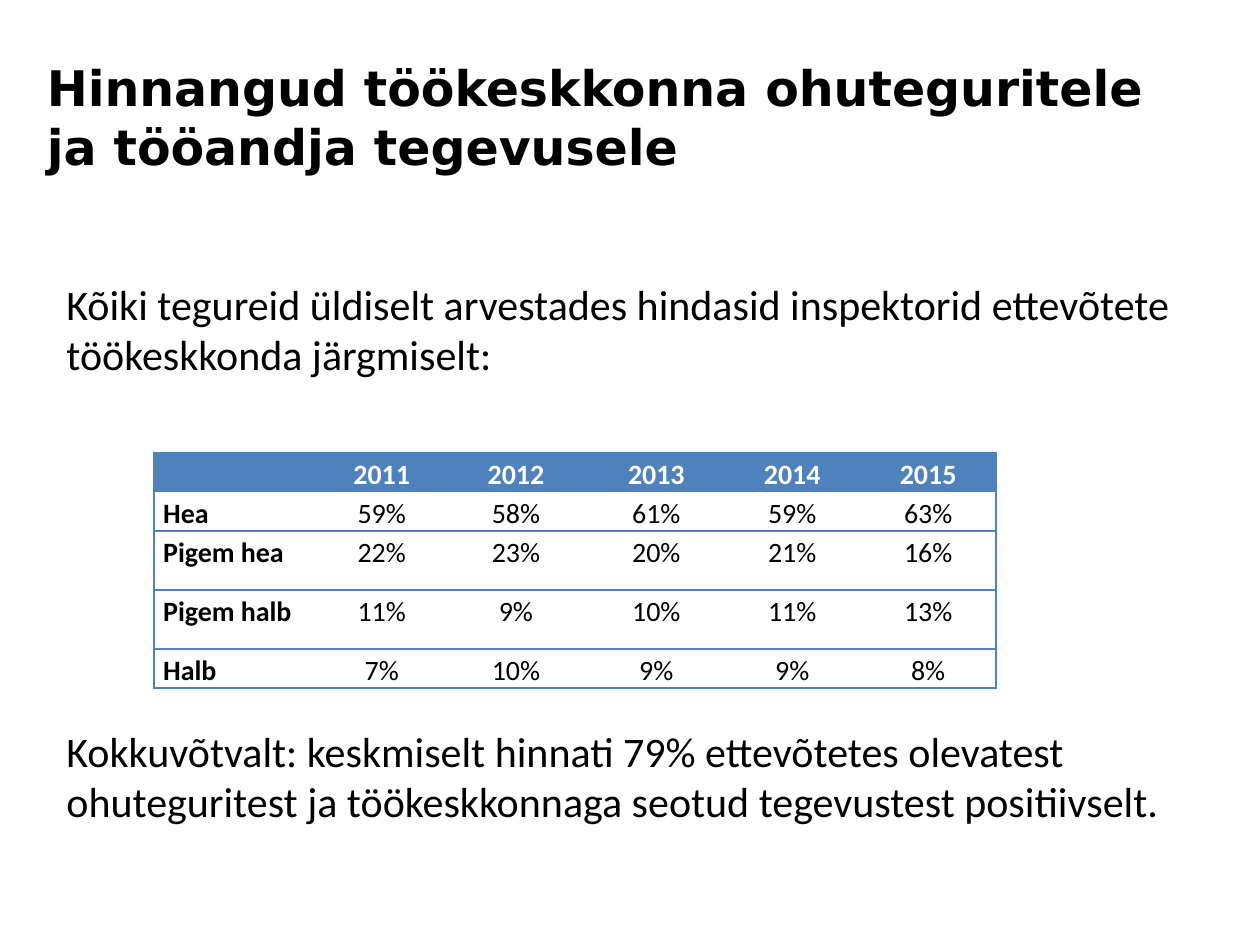
from lxml import etree
from pptx import Presentation
from pptx.dml.color import RGBColor
from pptx.enum.text import MSO_ANCHOR, PP_ALIGN
from pptx.oxml.ns import qn
from pptx.util import Cm, Pt

LEFT, CENTER = PP_ALIGN.LEFT, PP_ALIGN.CENTER
MIDDLE, TOP = MSO_ANCHOR.MIDDLE, MSO_ANCHOR.TOP
BLACK, WHITE, BLUE = "000000", "FFFFFF", "4F81BD"
PLAIN_STYLE = "{2D5ABB26-0587-4C30-8999-92F81FD0307C}"

TITLE = "Hinnangud töökeskkonna ohuteguritele ja tööandja tegevusele"
INTRO = ("Kõiki tegureid üldiselt arvestades hindasid inspektorid ettevõtete "
         "töökeskkonda järgmiselt:")
SUMMARY = ("Kokkuvõtvalt: keskmiselt hinnati 79% ettevõtetes olevatest ohuteguritest "
           "ja töökeskkonnaga seotud tegevustest positiivselt.")
RATINGS = [
    ["", "2011", "2012", "2013", "2014", "2015"],
    ["Hea", "59%", "58%", "61%", "59%", "63%"],
    ["Pigem hea", "22%", "23%", "20%", "21%", "16%"],
    ["Pigem halb", "11%", "9%", "10%", "11%", "13%"],
    ["Halb", "7%", "10%", "9%", "9%", "8%"],
]
COL_WIDTHS = [3.35, 2.49, 2.92, 2.74, 2.74, 2.74]
ROW_HEIGHTS = [0.79, 0.79, 1.19, 1.19, 0.79]


def rgb(color):
    return RGBColor.from_string(color)


def format_font(font, size, color=BLACK, bold=False, name="Calibri"):
    font.size, font.bold, font.name = Pt(size), bold, name
    font.color.rgb = rgb(color)


def place(sp, left, top, width, height):
    sp.left, sp.top, sp.width, sp.height = Cm(left), Cm(top), Cm(width), Cm(height)


def add_title(slide, *box):
    sp = slide.shapes.title
    place(sp, *box)
    tf = sp.text_frame
    tf.text = TITLE
    tf.vertical_anchor = MIDDLE
    p = tf.paragraphs[0]
    p.alignment = LEFT
    format_font(p.runs[0].font, 28, bold=True, name="DejaVu Sans")


def add_body(slide, *box):
    """Introduction and summary, with room for the table between them."""
    tf = slide.shapes.add_textbox(*map(Cm, box)).text_frame
    tf.word_wrap = True
    tf.margin_top = Cm(1.16)
    tf.text = INTRO
    p = tf.add_paragraph()
    p.text = SUMMARY
    p.space_before = Pt(198)
    for p in tf.paragraphs:
        format_font(p.runs[0].font, 24)


def set_borders(cell, sides):
    """Draw blue lines on the given sides, listed in the order L, R, T, B."""
    tcPr = cell._tc.get_or_add_tcPr()
    for i, side in enumerate(sides):
        ln = etree.Element(qn(f"a:ln{side}"), w=str(Pt(1)))
        fill = etree.SubElement(ln, qn("a:solidFill"))
        etree.SubElement(fill, qn("a:srgbClr"), val=BLUE)
        tcPr.insert(i, ln)


def format_cell(cell, text, is_header, is_label):
    cell.margin_left = cell.margin_right = Cm(0.19)
    cell.margin_top = cell.margin_bottom = 0
    cell.vertical_anchor = TOP
    cell.text = text
    p = cell.text_frame.paragraphs[0]
    p.alignment = LEFT if is_label else CENTER
    p.line_spacing = 1.15
    format_font(p.runs[0].font if p.runs else p.font, 16,
                WHITE if is_header else BLACK, is_header or is_label)
    if is_header:
        cell.fill.solid()
        cell.fill.fore_color.rgb = rgb(BLUE)
    else:
        cell.fill.background()


def add_ratings_table(slide, left, top):
    table = slide.shapes.add_table(
        len(RATINGS), len(COL_WIDTHS), Cm(left), Cm(top),
        Cm(sum(COL_WIDTHS)), Cm(sum(ROW_HEIGHTS))).table
    table.horz_banding = False
    table._tbl.tblPr.find(qn("a:tableStyleId")).text = PLAIN_STYLE
    for column, width in zip(table.columns, COL_WIDTHS):
        column.width = Cm(width)
    last = len(COL_WIDTHS) - 1
    for r, (values, height) in enumerate(zip(RATINGS, ROW_HEIGHTS)):
        table.rows[r].height = Cm(height)
        for c, text in enumerate(values):
            cell = table.cell(r, c)
            format_cell(cell, text, r == 0, c == 0)
            set_borders(cell, {0: "LTB", last: "RTB"}.get(c, "TB"))


def main():
    prs = Presentation()
    prs.slide_width, prs.slide_height = Cm(25.4), Cm(19.05)
    slide = prs.slides.add_slide(prs.slide_layouts[5])
    add_title(slide, 0.69, 0.76, 23.44, 3.18)
    add_body(slide, 1.09, 4.45, 23.04, 12.88)
    add_ratings_table(slide, 3.1, 9.12)
    prs.save("out.pptx")


if __name__ == "__main__":
    main()
